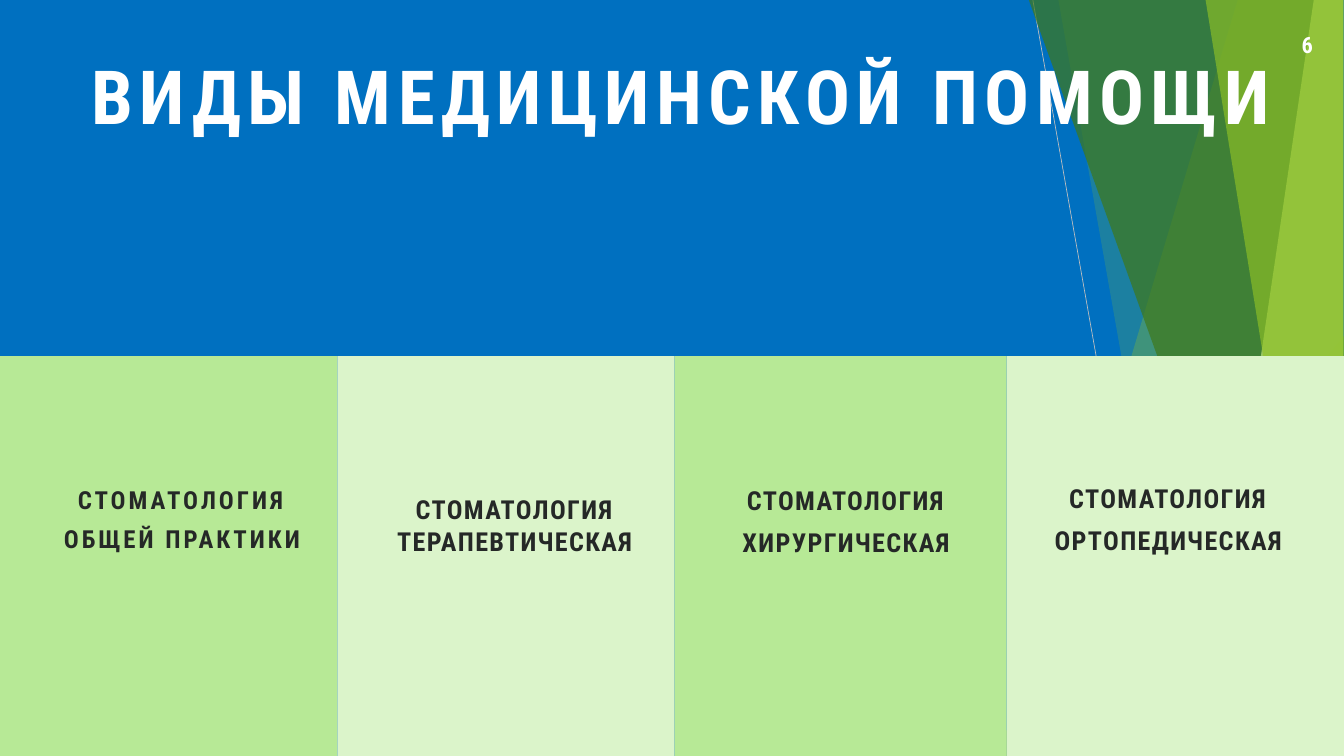
from lxml.etree import SubElement
from pptx import Presentation
from pptx.dml.color import RGBColor
from pptx.enum.shapes import MSO_CONNECTOR, MSO_SHAPE
from pptx.enum.text import MSO_AUTO_SIZE, PP_ALIGN
from pptx.oxml.ns import qn
from pptx.util import Pt

PX = 9144  # EMU in one px, 100 px to the inch
WIDE, HIGH = 2000, 1125
TOP = 530  # upper edge of the cards

COLORS = {
    "blue": "0070C0",
    "white": "FFFFFF",
    "ink": "252827",
    "gray": "BFBFBF",
    "leaf": "90C226",
    "grass": "54A021",
    "pine": "3F7819",
    "lime": "C0E474",
    "card": "B7E996",
    "pale": "DBF4CA",
}


def color(name):
    return RGBColor.from_string(COLORS[name])


class Deck:
    """Holds the font and the current slide."""

    font = "Roboto Condensed"

    def __init__(self):
        self.file = Presentation()
        self.file.slide_width = WIDE * PX
        self.file.slide_height = HIGH * PX
        self.slide = self.file.slides.add_slide(self.file.slide_layouts[6])
        self.shapes = self.slide.shapes
        back = self.slide.background.fill
        back.solid()
        back.fore_color.rgb = color("blue")

    def paint(self, shape, fill, alpha=100):
        """Give a flat fill, alpha in percent, with no line or shadow."""
        shape.shadow.inherit = False
        shape.line.fill.background()
        shape.fill.solid()
        shape.fill.fore_color.rgb = color(fill)
        if alpha < 100:
            tone = shape.fill._xPr.find(".//" + qn("a:srgbClr"))
            SubElement(tone, qn("a:alpha"), val=str(alpha * 1000))

    def shape(self, kind, left, top, wide, high, fill, alpha=100):
        item = self.shapes.add_shape(kind, left * PX, top * PX, wide * PX, high * PX)
        self.paint(item, fill, alpha)
        return item

    def facet(self, upper, right, lower, fill, alpha):
        """Draw a full-height panel with a slanted left side."""
        pen = self.shapes.build_freeform(upper, 0, scale=PX)
        pen.add_line_segments([(right, 0), (right, HIGH), (lower, HIGH)], close=True)
        self.paint(pen.convert_to_shape(), fill, alpha)

    def line(self, x1, y1, x2, y2, tone, width):
        item = self.shapes.add_connector(
            MSO_CONNECTOR.STRAIGHT, x1 * PX, y1 * PX, x2 * PX, y2 * PX)
        item.line.color.rgb = color(tone)
        item.line.width = Pt(width)
        SubElement(item._element.spPr, qn("a:effectLst"))

    def text(self, words, left, top, wide, high, size=28, lead=44.8, gap=1.5, tone="ink"):
        """Add centred bold text; lead is line height, gap is letter spacing."""
        box = self.shapes.add_textbox(left * PX, top * PX, wide * PX, high * PX)
        frame = box.text_frame
        frame.word_wrap = True
        frame.auto_size = MSO_AUTO_SIZE.SHAPE_TO_FIT_TEXT
        frame.margin_left = frame.margin_right = 0
        frame.margin_top = frame.margin_bottom = 0
        para = frame.paragraphs[0]
        para.alignment = PP_ALIGN.CENTER
        para.line_spacing = Pt(lead)
        run = para.add_run()
        run.text = words
        run.font.name = self.font
        run.font.size = Pt(size)
        run.font.bold = True
        run.font.color.rgb = color(tone)
        run._r.get_or_add_rPr().set("spc", str(round(gap * 100)))


def main():
    deck = Deck()

    deck.line(1537, 0, 1737, HIGH, "gray", 0.75)
    deck.facet(1842, 1999, 1506, "leaf", 30)
    deck.facet(1575, 2000, 1774, "leaf", 20)
    peak = deck.shape(MSO_SHAPE.ISOSCELES_TRIANGLE, 1465, 500, 535, 625, "grass", 72)
    peak.adjustments[0] = 1
    deck.facet(1531, 1999, 1937, "pine", 70)
    deck.facet(1955, 1999, 1788, "lime", 70)
    deck.facet(1794, 1999, 1976, "leaf", 65)

    edges = [0, 502, 1004, 1498, WIDE]
    for i, (left, right) in enumerate(zip(edges, edges[1:])):
        fill = "pale" if i % 2 else "card"
        deck.shape(MSO_SHAPE.RECTANGLE, left, TOP, right - left, HIGH - TOP, fill)

    deck.text("СТОМАТОЛОГИЯ ОБЩЕЙ ПРАКТИКИ", 56, 706, 430, 121, size=26.6, lead=42.6, gap=3.2)
    deck.text("СТОМАТОЛОГИЯ ТЕРАПЕВТИЧЕСКАЯ", 554, 734, 424, 93, lead=33.9)
    deck.text("СТОМАТОЛОГИЯ ХИРУРГИЧЕСКАЯ", 1047, 706, 424, 120)
    deck.text("СТОМАТОЛОГИЯ ОРТОПЕДИЧЕСКАЯ", 1518, 703, 441, 120)

    deck.text("ВИДЫ МЕДИЦИНСКОЙ ПОМОЩИ", 135, 107, 1758, 205,
              size=80, lead=72.8, gap=7, tone="white")
    deck.text("6", 1891, 39, 109, 44, size=24, lead=33.6, gap=0, tone="white")

    deck.file.save("out.pptx")


if __name__ == "__main__":
    main()
